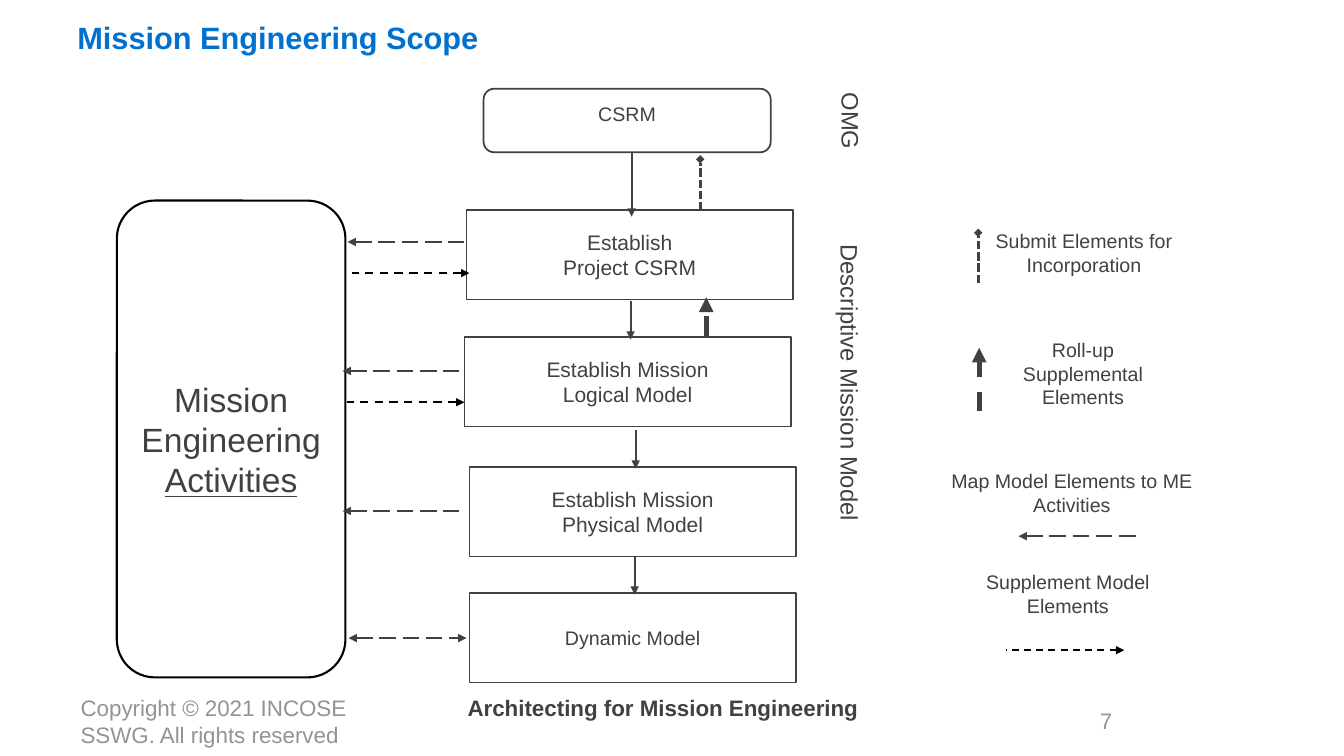
from dataclasses import dataclass, replace
from typing import Optional

from lxml.etree import SubElement
from pptx import Presentation
from pptx.dml.color import RGBColor
from pptx.enum.dml import MSO_LINE as Dash
from pptx.enum.shapes import MSO_CONNECTOR, MSO_SHAPE as Preset
from pptx.enum.text import MSO_ANCHOR as Anchor, PP_ALIGN as Align
from pptx.oxml.ns import qn
from pptx.util import Pt

BLACK = RGBColor(0x00, 0x00, 0x00)
CHARCOAL = RGBColor(0x41, 0x40, 0x42)
GREY = RGBColor(0x93, 0x93, 0x93)
BLUE = RGBColor(0x00, 0x71, 0xCE)
FONT = "Arial"


@dataclass(frozen=True)
class Caption:
    text: str
    left: float
    top: float
    width: float
    height: float
    size: float = 14
    color: RGBColor = CHARCOAL
    bold: bool = False
    align: Align = Align.CENTER
    anchor: Anchor = Anchor.TOP
    inset: tuple[float, float] = (7.2, 3.6)
    vertical: bool = False


@dataclass(frozen=True)
class Box:
    text: str
    left: float
    top: float
    width: float = 233.3
    height: float = 64.1
    size: float = 15
    preset: Preset = Preset.RECTANGLE
    outline: RGBColor = CHARCOAL
    weight: float = 1.25
    anchor: Anchor = Anchor.MIDDLE
    inset: tuple[float, float] = (7.2, 3.6)


@dataclass(frozen=True)
class ArrowStyle:
    weight: float
    dash: Optional[Dash] = None
    color: RGBColor = CHARCOAL
    start: str = "none"
    end: str = "none"


@dataclass(frozen=True)
class Arrow:
    style: ArrowStyle
    x1: float
    y1: float
    x2: float
    y2: float


DERIVE = ArrowStyle(1.5, end="triangle")
SUBMIT = ArrowStyle(2, Dash.SQUARE_DOT, end="diamond")
ROLL_UP = ArrowStyle(3.5, Dash.DASH, end="triangle")
MAP = ArrowStyle(1.5, Dash.LONG_DASH, start="triangle")
MAP_BOTH = replace(MAP, end="triangle")
SUPPLEMENT = ArrowStyle(1.5, Dash.DASH, BLACK, start="triangle")

FOOTER = dict(size=16, color=GREY, anchor=Anchor.MIDDLE, inset=(9.4, 5))

CAPTIONS = [
    Caption("Mission Engineering Scope", 48.2, 10.1, 864.7, 59.8,
            size=22, color=BLUE, bold=True, align=Align.LEFT),
    Caption("OMG", 576.7, 59, 45.4, 64.1,
            size=17, align=Align.LEFT, vertical=True),
    Caption("Descriptive Mission Model", 576, 136.1, 45.4, 274.3,
            size=17, vertical=True),
    Caption("Submit Elements for Incorporation", 702, 148.3, 145.4, 64.1,
            anchor=Anchor.MIDDLE),
    Caption("Roll-up Supplemental Elements", 701.3, 234.7, 145.4, 64.1,
            anchor=Anchor.MIDDLE),
    Caption("Map Model Elements to ME Activities", 668.9, 319.7, 194.4, 64.1,
            anchor=Anchor.MIDDLE),
    Caption("Supplement Model Elements", 673.9, 403.9, 178.6, 52.6),
    Caption("Copyright © 2021 INCOSE SSWG. All rights reserved",
            48.2, 500.4, 223.9, 28.8, align=Align.LEFT, **FOOTER),
    Caption("Architecting for Mission Engineering", 193.7, 492.5, 560.2, 26.6,
            size=16, bold=True),
    Caption("7", 636.5, 500.4, 167.8, 28.8, align=Align.RIGHT, **FOOTER),
]

ACTIVITIES = Box("Mission Engineering ", 83.5, 143.3, 163.4, 340.6, size=24,
                 preset=Preset.ROUNDED_RECTANGLE, outline=BLACK, weight=1.5)
MODELS = [
    Box("CSRM", 345.6, 63.4, 205.2, 45.4, size=14,
        preset=Preset.ROUNDED_RECTANGLE, anchor=Anchor.TOP, inset=(7.2, 7.2)),
    Box("Establish\vProject CSRM", 333.4, 149.8),
    Box("Establish Mission\vLogical Model", 331.9, 240.5),
    Box("Establish Mission\vPhysical Model", 335.5, 333.4),
    Box("Dynamic Model", 335.5, 423.4, size=14),
]

ARROWS = [
    # Between the models
    Arrow(DERIVE, 451.4, 109.4, 451.4, 154.8),
    Arrow(DERIVE, 450.7, 215.3, 450.7, 242.6),
    Arrow(DERIVE, 454.3, 307.4, 454.3, 334.8),
    Arrow(DERIVE, 453.6, 397.4, 453.6, 424.8),
    Arrow(SUBMIT, 500.4, 150.5, 500.4, 113.8),
    Arrow(ROLL_UP, 504.7, 239.8, 504.7, 212.4),
    # Between the activities and the models
    Arrow(MAP, 248.4, 172.8, 331.9, 172.8),
    Arrow(SUPPLEMENT, 335.5, 195.1, 251.3, 195.1),
    Arrow(MAP, 244.8, 265, 328.3, 265),
    Arrow(SUPPLEMENT, 331.9, 287.3, 247.7, 287.3),
    Arrow(MAP, 244.8, 365, 328.3, 365),
    Arrow(MAP_BOTH, 249.1, 455.8, 333.4, 455.8),
    # Legend
    Arrow(SUBMIT, 699.1, 202.3, 699.1, 166.3),
    Arrow(ROLL_UP, 699.8, 293.8, 699.8, 248.4),
    Arrow(MAP, 727.9, 383, 812.2, 383),
    Arrow(replace(SUPPLEMENT, weight=1.25), 803.5, 464.4, 719.3, 464.4),
]


def style_run(run, size: float, color: RGBColor, bold: bool = False) -> None:
    run.font.name = FONT
    run.font.size = Pt(size)
    run.font.bold = bold
    run.font.color.rgb = color


def fill_frame(frame, text: str, size: float, color: RGBColor, align: Align,
               anchor: Anchor, inset: tuple[float, float],
               bold: bool = False) -> None:
    """Put one formatted paragraph into a wrapping text frame."""
    frame.word_wrap = True
    frame.vertical_anchor = anchor
    frame.margin_left = frame.margin_right = Pt(inset[0])
    frame.margin_top = frame.margin_bottom = Pt(inset[1])
    paragraph = frame.paragraphs[0]
    paragraph.text = text
    paragraph.alignment = align
    for run in paragraph.runs:
        style_run(run, size, color, bold)


def add_caption(slide, caption: Caption) -> None:
    frame = slide.shapes.add_textbox(
        Pt(caption.left), Pt(caption.top),
        Pt(caption.width), Pt(caption.height)).text_frame
    fill_frame(frame, caption.text, caption.size, caption.color, caption.align,
               caption.anchor, caption.inset, caption.bold)
    if caption.vertical:
        frame._txBody.bodyPr.set("vert", "vert")


def add_box(slide, box: Box):
    shape = slide.shapes.add_shape(box.preset, Pt(box.left), Pt(box.top),
                                   Pt(box.width), Pt(box.height))
    shape.shadow.inherit = False
    shape.fill.background()
    shape.line.color.rgb = box.outline
    shape.line.width = Pt(box.weight)
    fill_frame(shape.text_frame, box.text, box.size, CHARCOAL, Align.CENTER,
               box.anchor, box.inset)
    return shape


def add_arrow(slide, arrow: Arrow) -> None:
    style = arrow.style
    connector = slide.shapes.add_connector(
        MSO_CONNECTOR.STRAIGHT, Pt(arrow.x1), Pt(arrow.y1),
        Pt(arrow.x2), Pt(arrow.y2))
    line = connector.line
    line.color.rgb = style.color
    line.width = Pt(style.weight)
    if style.dash is not None:
        line.dash_style = style.dash
    outline = line._get_or_add_ln()
    SubElement(outline, qn("a:headEnd"), type=style.start)
    SubElement(outline, qn("a:tailEnd"), type=style.end)
    SubElement(connector._element.spPr, qn("a:effectLst"))


def main() -> None:
    deck = Presentation()
    deck.slide_width, deck.slide_height = Pt(960.5), Pt(540)
    slide = deck.slides.add_slide(deck.slide_layouts[6])

    activities = add_box(slide, ACTIVITIES)
    underlined = activities.text_frame.paragraphs[0].add_run()
    underlined.text = "Activities"
    style_run(underlined, ACTIVITIES.size, CHARCOAL)
    underlined.font.underline = True

    for model in MODELS:
        add_box(slide, model)
    for arrow in ARROWS:
        add_arrow(slide, arrow)
    for caption in CAPTIONS:
        add_caption(slide, caption)
    deck.save("out.pptx")


if __name__ == "__main__":
    main()
